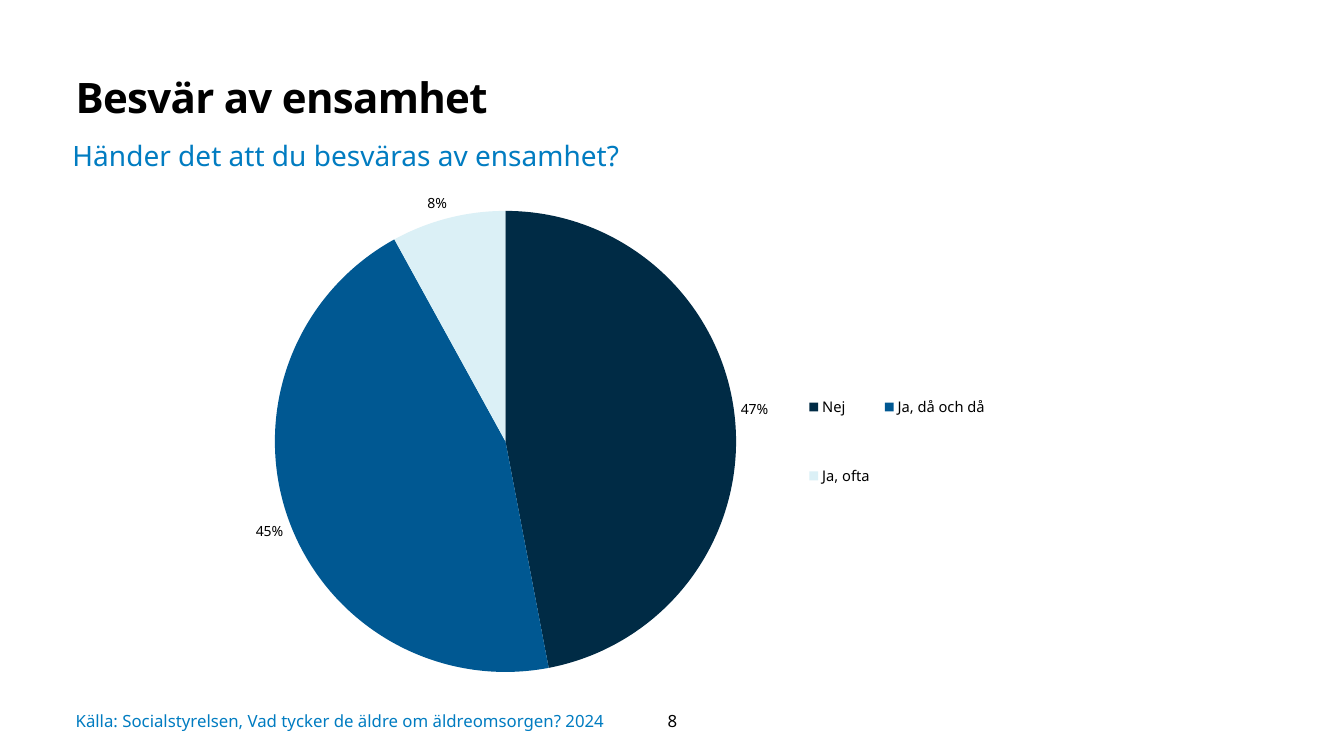
import pptx
import pptx.chart.data
import pptx.dml.color
import pptx.enum.chart
import pptx.enum.text
import pptx.oxml
import pptx.oxml.ns
import pptx.util
from pptx.util import Inches

FONT = "Noto Sans"
COLORS = {"text": "000000", "accent": "017CC1"}
ANSWERS = [("Nej", 47, "002B45"), ("Ja, då och då", 45, "005892"), ("Ja, ofta", 8, "DBF0F6")]
ALIGN = pptx.enum.text.PP_ALIGN
ANCHOR = pptx.enum.text.MSO_ANCHOR


def rgb(value):
    return pptx.dml.color.RGBColor.from_string(value)


def style_font(font, size, color):
    font.name = FONT
    font.size = pptx.util.Pt(size)
    font.color.rgb = rgb(color)


def write_line(frame, text, size, color, align=ALIGN.LEFT, anchor=ANCHOR.TOP,
               insets=(0.1, 0.05, 0.1, 0.05)):
    """Fill a text frame with one line; insets are left, top, right, bottom."""
    frame.word_wrap = True
    frame.auto_size = pptx.enum.text.MSO_AUTO_SIZE.NONE
    frame.vertical_anchor = anchor
    (frame.margin_left, frame.margin_top,
     frame.margin_right, frame.margin_bottom) = map(Inches, insets)
    paragraph = frame.paragraphs[0]
    paragraph.alignment = align
    run = paragraph.add_run()
    run.text = text
    style_font(run.font, size, color)
    return paragraph, run


def add_heading(slide, left, top, width, height):
    title = slide.shapes.title
    title.left, title.top = Inches(left), Inches(top)
    title.width, title.height = Inches(width), Inches(height)
    paragraph, run = write_line(title.text_frame, "Besvär av ensamhet", 30, COLORS["text"],
                                insets=(0, 0, 0.1, 0.05))
    paragraph.line_spacing = 1.1
    run.font.bold = True
    run.font._element.set("spc", "-50")


def add_line(slide, left, top, width, height, text, size, color, **layout):
    box = slide.shapes.add_textbox(Inches(left), Inches(top), Inches(width), Inches(height))
    write_line(box.text_frame, text, size, color, **layout)


def place_in_chart(part, after, x, y, w, h, inner=False):
    """Fix a chart part at fractions of the chart area, after its named child."""
    target = '<c:layoutTarget val="inner"/>' if inner else ""
    sizes = "".join(f'<c:{tag} val="{value}"/>' for tag, value in zip("xywh", (x, y, w, h)))
    layout = pptx.oxml.parse_xml(
        f'<c:layout {pptx.oxml.ns.nsdecls("c")}><c:manualLayout>{target}'
        f'<c:xMode val="edge"/><c:yMode val="edge"/>{sizes}</c:manualLayout></c:layout>')
    for old in part.findall(pptx.oxml.ns.qn("c:layout")):
        part.remove(old)
    if after is None:
        part.insert(0, layout)
    else:
        part.find(pptx.oxml.ns.qn(after)).addnext(layout)


def add_answer_pie(slide, left, top, width, height):
    data = pptx.chart.data.CategoryChartData()
    data.categories = [answer for answer, _, _ in ANSWERS]
    data.add_series("Series 1", [share for _, share, _ in ANSWERS])
    chart = slide.shapes.add_chart(
        pptx.enum.chart.XL_CHART_TYPE.PIE, Inches(left), Inches(top),
        Inches(width), Inches(height), data).chart
    chart.has_title = False
    style_font(chart.font, 10, COLORS["text"])

    chart.has_legend = True
    legend = chart.legend
    legend.position = pptx.enum.chart.XL_LEGEND_POSITION.RIGHT
    legend.include_in_layout = False
    style_font(legend.font, 10.5, COLORS["text"])
    place_in_chart(legend._element, "c:legendPos", 0.75, 0.32, 0.25, 0.36)

    pie = chart.plots[0]
    pie.vary_by_categories = True
    for index, (_, _, color) in enumerate(ANSWERS):
        fill = pie.series[0].points[index].format.fill
        fill.solid()
        fill.fore_color.rgb = rgb(color)
    pie.has_data_labels = True
    labels = pie.data_labels
    labels.show_value = False
    labels.show_percentage = True
    labels.number_format = "0%"
    labels.number_format_is_linked = False
    labels.position = pptx.enum.chart.XL_LABEL_POSITION.OUTSIDE_END
    style_font(labels.font, 10, COLORS["text"])
    plot_area = chart._chartSpace.chart.plotArea
    place_in_chart(plot_area, None, 0.08, 0.055, 0.59, 0.89, inner=True)


def add_footer(slide, left, top, height):
    add_line(slide, left, top + 0.05, 5.91, height - 0.1,
             "Källa: Socialstyrelsen, Vad tycker de äldre om äldreomsorgen? 2024",
             12, COLORS["accent"], anchor=ANCHOR.MIDDLE, insets=(0, 0, 0, 0))
    add_line(slide, left + 5.41, top, 1.02, height, "8", 12, COLORS["text"],
             align=ALIGN.CENTER, anchor=ANCHOR.MIDDLE)


def main():
    deck = pptx.Presentation()
    deck.slide_width, deck.slide_height = Inches(13.33), Inches(7.5)
    slide = deck.slides.add_slide(deck.slide_layouts[5])
    add_heading(slide, 0.75, 0.66, 10.63, 0.67)
    add_line(slide, 0.62, 1.33, 10.31, 0.44, "Händer det att du besväras av ensamhet?",
             20, COLORS["accent"])
    add_answer_pie(slide, 2.1, 1.81, 7.77, 5.14)
    add_footer(slide, 0.75, 6.95, 0.4)
    deck.save("out.pptx")


if __name__ == "__main__":
    main()
